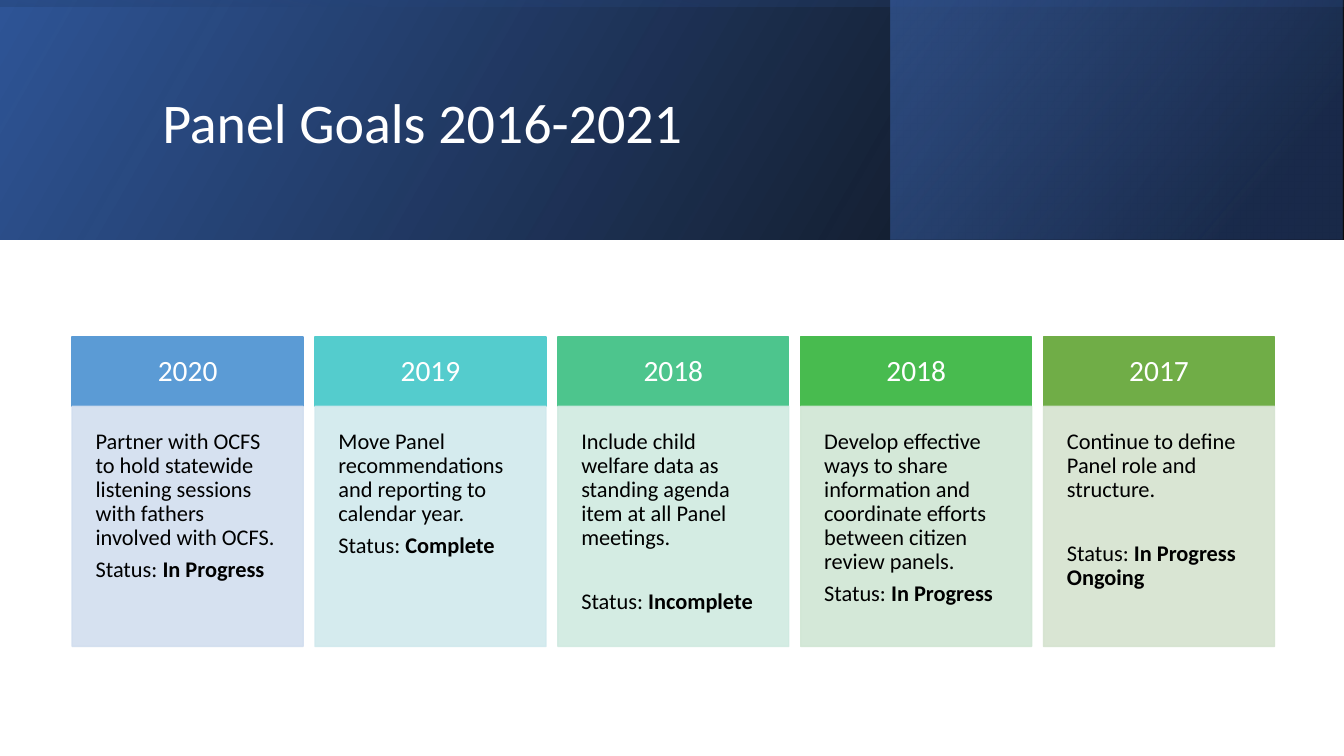
from dataclasses import dataclass

from lxml.etree import SubElement
from pptx import Presentation
from pptx.dml.color import RGBColor
from pptx.enum.shapes import MSO_SHAPE as Preset
from pptx.enum.text import MSO_ANCHOR as Anchor, PP_ALIGN as Align
from pptx.oxml.ns import qn
from pptx.util import Cm, Pt

TITLE = "Panel Goals 2016-2021"
# year, header colour, body colour, goal, status, gap before status (points)
GOALS = [
    ("2020", "5B9BD5", "D2DEEF",
     "Partner with OCFS to hold statewide listening sessions with fathers involved with OCFS.",
     "In Progress", 0),
    ("2019", "54CCCD", "D1E9ED",
     "Move Panel recommendations and reporting to calendar year.", "Complete", 0),
    ("2018", "4DC58D", "D0EAE1",
     "Include child welfare data as standing agenda item at all Panel meetings.",
     "Incomplete", 23),
    ("2018", "48BB4F", "D0E6D4",
     "Develop effective ways to share information and coordinate efforts between citizen "
     "review panels.", "In Progress", 0),
    ("2017", "70AD47", "D5E3CF",
     "Continue to define Panel role and structure.", "In Progress Ongoing", 23),
]

SLIDE_WIDTH, SLIDE_HEIGHT = 33.87, 19.05
BANNER_HEIGHT = 6.03
# left, top, width, height, rotation, angle, stops of (position, colour, opacity)
BANNER_LAYERS = [
    (0, 0, SLIDE_WIDTH, BANNER_HEIGHT, 0, 330, [(0, "000000", 96), (100, "2F5597", 100)]),
    (22.45, 0, 11.39, BANNER_HEIGHT, 0, 320, [(19, "203864", 68), (100, "4472C4", 48)]),
    ((SLIDE_WIDTH - BANNER_HEIGHT) / 2, (BANNER_HEIGHT - SLIDE_WIDTH) / 2,
     BANNER_HEIGHT, SLIDE_WIDTH, 270, 350, [(23, "2F5597", 16), (99, "000000", 45)]),
]
COLUMN_LEFT, COLUMN_PITCH, COLUMN_WIDTH = 1.82, 6.12, 5.82
HEADER_TOP, HEADER_HEIGHT, BODY_HEIGHT = 8.49, 1.75, 6.05


@dataclass(frozen=True)
class Theme:
    font: str = "Calibri"
    light: str = "FFFFFF"
    dark: str = "000000"
    title_size: float = 40
    year_size: float = 21
    body_size: float = 16
    body_opacity: int = 90


THEME = Theme()


def set_opacity(color_element, percent):
    SubElement(color_element, qn("a:alpha")).set("val", str(percent * 1000))


def add_rectangle(slide, left, top, width, height):
    shape = slide.shapes.add_shape(Preset.RECTANGLE, Cm(left), Cm(top), Cm(width), Cm(height))
    shape.shadow.inherit = False
    return shape


def add_banner_layer(slide, left, top, width, height, rotation, angle, stops):
    """Add a mirrored rectangle with a translucent linear gradient."""
    shape = add_rectangle(slide, left, top, width, height)
    shape.rotation = rotation
    shape._element.spPr.find(qn("a:xfrm")).set("flipH", "1")
    shape.line.fill.background()
    shape.fill.gradient()
    shape.fill.gradient_angle = 360 - angle
    for stop, (position, color, opacity) in zip(shape.fill.gradient_stops, stops):
        stop.position = position / 100
        stop.color.rgb = RGBColor.from_string(color)
        set_opacity(stop._gs.find(qn("a:srgbClr")), opacity)


def add_panel(slide, left, top, width, height, color, opacity=100):
    """Add a rectangle whose fill and outline share one colour."""
    shape = add_rectangle(slide, left, top, width, height)
    shape.line.width = Pt(1)
    for fill in (shape.fill, shape.line.fill):
        fill.solid()
        fill.fore_color.rgb = RGBColor.from_string(color)
    if opacity < 100:
        for color_element in list(shape._element.spPr.iter(qn("a:srgbClr"))):
            set_opacity(color_element, opacity)
    return shape


def write_text(shape, paragraphs, *, size, color, align=Align.LEFT, anchor=Anchor.TOP,
               inset=0.25, space_after=0):
    """Write paragraphs, each given as (space before, [(text, bold), ...])."""
    frame = shape.text_frame
    frame.word_wrap = True
    frame.vertical_anchor = anchor
    frame.margin_left = frame.margin_right = Cm(inset)
    frame.margin_top = frame.margin_bottom = Cm(inset)
    for index, (space_before, runs) in enumerate(paragraphs):
        paragraph = frame.add_paragraph() if index else frame.paragraphs[0]
        paragraph.alignment = align
        paragraph.line_spacing = 0.9
        paragraph.space_before = Pt(space_before)
        paragraph.space_after = Pt(space_after)
        for text, bold in runs:
            run = paragraph.add_run()
            run.text = text
            run.font.name = THEME.font
            run.font.size = Pt(size)
            run.font.bold = bold
            run.font.color.rgb = RGBColor.from_string(color)


def add_goal(slide, left, year, header_color, body_color, goal, status, gap):
    header = add_panel(slide, left, HEADER_TOP, COLUMN_WIDTH, HEADER_HEIGHT, header_color)
    write_text(header, [(0, [(year, False)])], size=THEME.year_size, color=THEME.light,
               align=Align.CENTER, anchor=Anchor.MIDDLE, inset=0.45)
    body = add_panel(slide, left, HEADER_TOP + HEADER_HEIGHT, COLUMN_WIDTH, BODY_HEIGHT,
                     body_color, THEME.body_opacity)
    write_text(body, [(0, [(goal, False)]), (gap, [("Status: ", False), (status, True)])],
               size=THEME.body_size, color=THEME.dark, inset=0.59, space_after=5.6)


def main():
    presentation = Presentation()
    presentation.slide_width, presentation.slide_height = Cm(SLIDE_WIDTH), Cm(SLIDE_HEIGHT)
    slide = presentation.slides.add_slide(presentation.slide_layouts[6])
    for layer in BANNER_LAYERS:
        add_banner_layer(slide, *layer)
    title = slide.shapes.add_textbox(Cm(3.84), Cm(0.97), Cm(27), Cm(4.37))
    write_text(title, [(0, [(TITLE, False)])], size=THEME.title_size, color=THEME.light,
               anchor=Anchor.MIDDLE)
    for index, goal in enumerate(GOALS):
        add_goal(slide, COLUMN_LEFT + index * COLUMN_PITCH, *goal)
    presentation.save("out.pptx")


if __name__ == "__main__":
    main()
